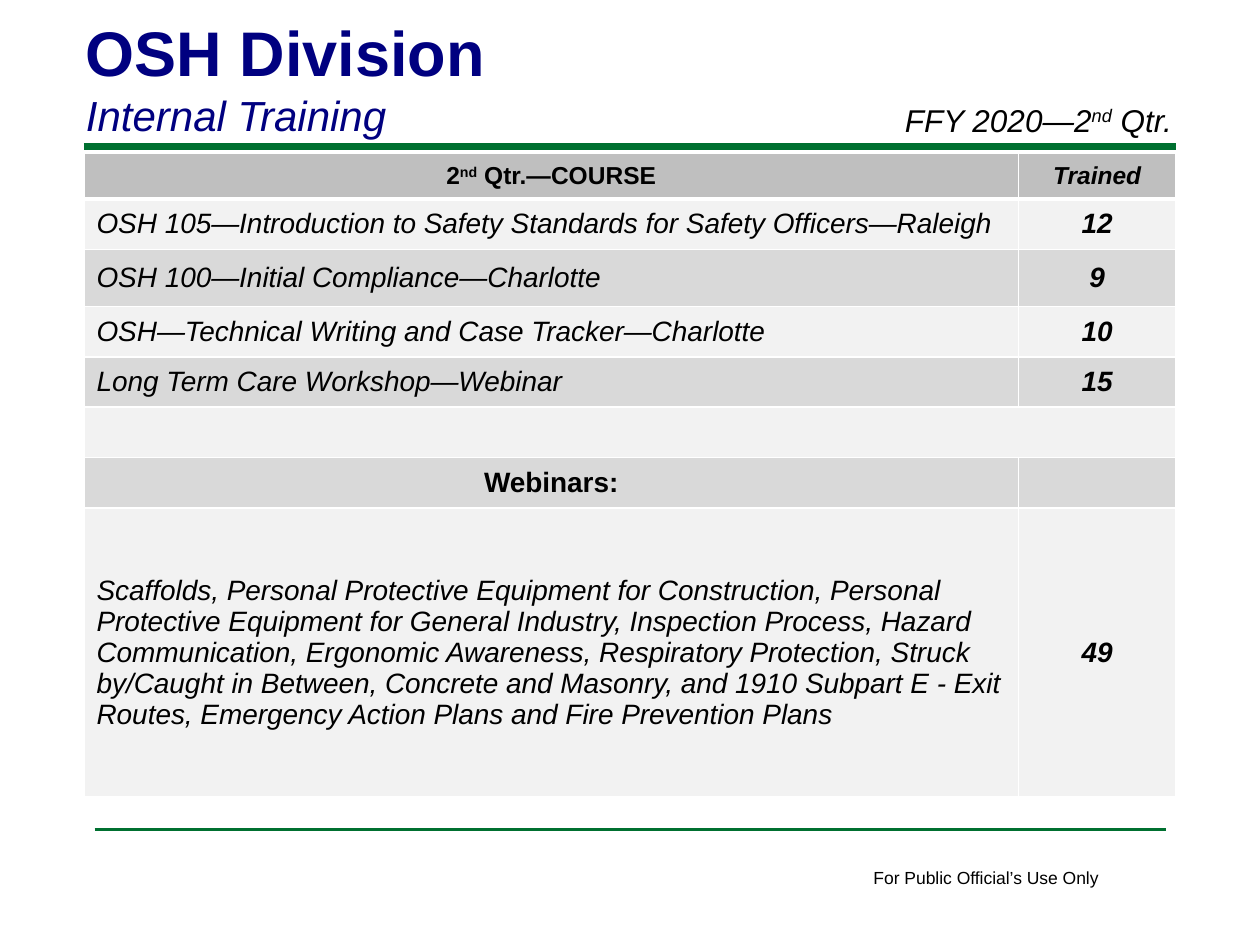
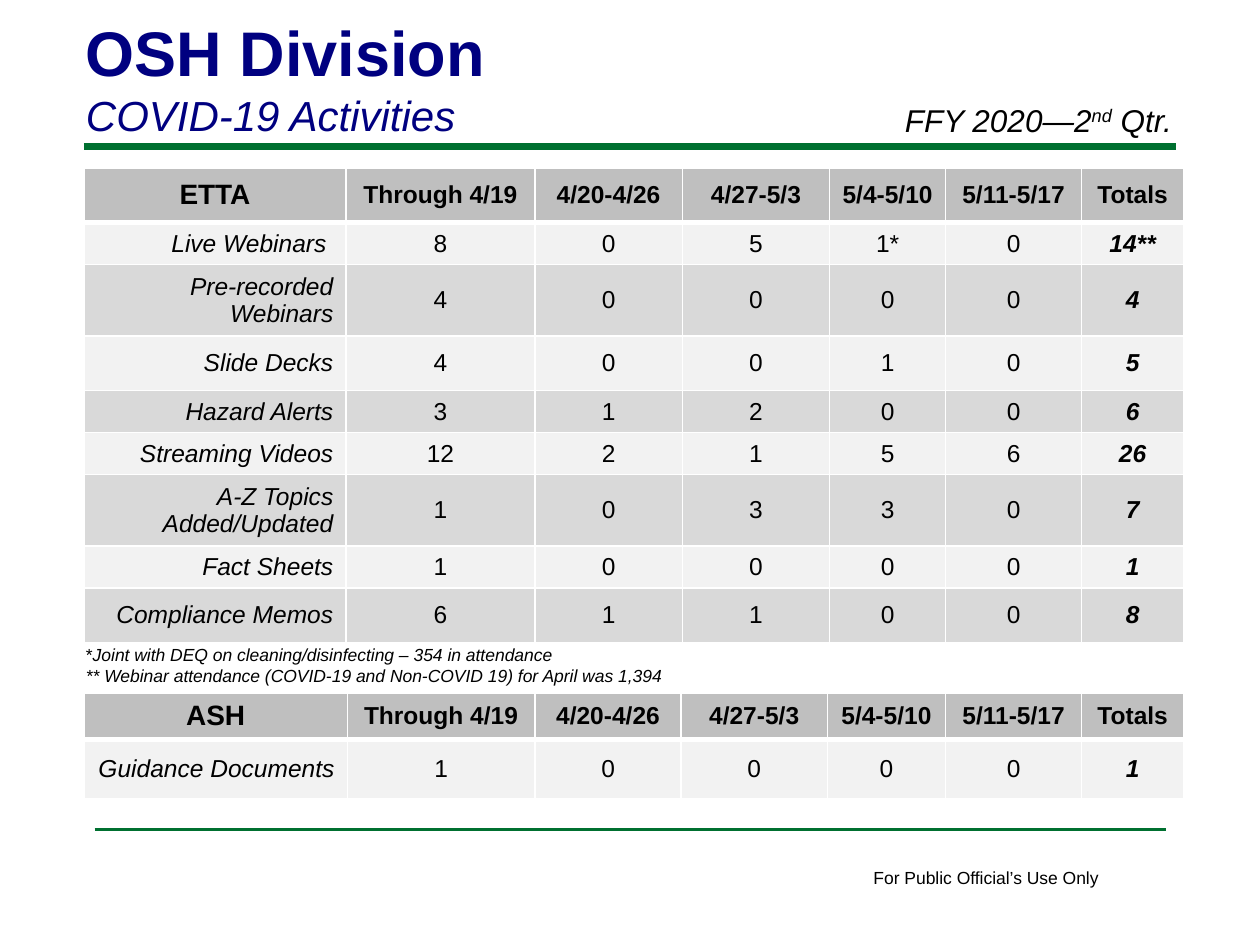
from dataclasses import dataclass

from lxml import etree
from pptx import Presentation
from pptx.dml.color import RGBColor
from pptx.enum.shapes import MSO_CONNECTOR
from pptx.enum.text import MSO_ANCHOR, PP_ALIGN
from pptx.oxml.ns import qn
from pptx.util import Inches, Pt

LEFT, CENTER, RIGHT = PP_ALIGN.LEFT, PP_ALIGN.CENTER, PP_ALIGN.RIGHT
MIDDLE = MSO_ANCHOR.MIDDLE
STRAIGHT = MSO_CONNECTOR.STRAIGHT


@dataclass(frozen=True)
class Theme:
    """Colours, font and type sizes shared by the slides."""
    font: str = "Arial"
    navy: str = "000080"
    green: str = "007030"
    black: str = "000000"
    white: str = "FFFFFF"
    head_fill: str = "BFBFBF"
    band_fills: tuple = ("F2F2F2", "D9D9D9")
    title: int = 36
    subtitle: int = 24
    period: int = 18
    large: int = 16
    body: int = 14
    small: int = 10


T = Theme()
WIDTH, HEIGHT = Inches(10), Inches(7.5)
COLS, ROWS = 120, 90


def across(n):
    """Return the length of n grid columns."""
    return round(WIDTH * n / COLS)


def down(n):
    """Return the length of n grid rows."""
    return round(HEIGHT * n / ROWS)


def write(p, text, size=T.body, color=T.black, bold=False, italic=False, align=LEFT):
    """Add text to a paragraph, with parts between carets as superscript."""
    p.alignment = align
    for i, part in enumerate(text.split("^")):
        if not part:
            continue
        r = p.add_run()
        r.text = part
        r.font.name, r.font.size = T.font, Pt(size)
        r.font.bold, r.font.italic = bold, italic
        r.font.color.rgb = RGBColor.from_string(color)
        if i % 2:
            r.font._element.set("baseline", "30000")


def add_text_frame(slide, box, wrap=True):
    """Add a text box on the grid and return its text frame."""
    x, y, w, h = box
    tf = slide.shapes.add_textbox(across(x), down(y), across(w), down(h)).text_frame
    tf.word_wrap = wrap
    return tf


def add_rule(slide, x, y, w, weight):
    """Draw a horizontal green rule."""
    line = slide.shapes.add_connector(STRAIGHT, across(x), down(y), across(x + w), down(y))
    line.line.color.rgb = RGBColor.from_string(T.green)
    line.line.width = Pt(weight)
    etree.SubElement(line._element.spPr, qn("a:effectLst"))


def add_header(slide, box, subtitle):
    """Place the title, subtitle, reporting period and rule."""
    x, y, w, h = box
    add_rule(slide, x, y + h, w, 4)
    tf = add_text_frame(slide, (x - 1, y, w - 5, h))
    write(tf.paragraphs[0], "OSH Division", size=T.title, color=T.navy, bold=True)
    write(tf.add_paragraph(), subtitle, size=T.subtitle, color=T.navy, italic=True)
    tf = add_text_frame(slide, (x + w - 27, y + h - 5, 30, 4.8))
    write(tf.paragraphs[0], "FFY 2020—2^nd^ Qtr.", size=T.period, italic=True)


def add_footer(slide, box):
    """Place the lower rule and the notice below it."""
    x, y, w, h = box
    add_rule(slide, x, y, w, 2)
    tf = add_text_frame(slide, (x + w - 29, y + 3, 24.1, h - 3), wrap=False)
    write(tf.paragraphs[0], "For Public Official’s Use Only", size=T.small)


def set_borders(cell, top, bottom):
    """Give a cell white borders with the given top and bottom weights."""
    tc_pr = cell._tc.get_or_add_tcPr()
    for side, weight in (("L", 1), ("R", 1), ("T", top), ("B", bottom)):
        ln = etree.SubElement(tc_pr, qn(f"a:ln{side}"), w=str(Pt(weight)))
        fill = etree.SubElement(ln, qn("a:solidFill"))
        etree.SubElement(fill, qn("a:srgbClr"), val=T.white)


def add_banded_table(slide, box, col_shares, row_shares, data, head, body):
    """Build a banded table; a None cell joins the one on its left."""
    x, y, w, h = box
    table = slide.shapes.add_table(
        len(row_shares), len(col_shares), across(x), down(y), across(w), down(h)).table
    table.first_row = table.horz_banding = False
    for col, share in zip(table.columns, col_shares):
        col.width = across(w * share / sum(col_shares))
    for row, share in zip(table.rows, row_shares):
        row.height = down(h * share / sum(row_shares))
    for i, values in enumerate(data):
        fill = T.band_fills[(i - 1) % 2] if i else T.head_fill
        for j, value in enumerate(values):
            cell = table.cell(i, j)
            set_borders(cell, 3 if i == 1 else 1, 1 if i else 3)
            cell.fill.solid()
            cell.fill.fore_color.rgb = RGBColor.from_string(fill)
            cell.vertical_anchor = MIDDLE
            if value is None:
                table.cell(i, j - 1).merge(cell)
                continue
            text, extra = value if isinstance(value, tuple) else (value, {})
            fmt = (body if i else head)[j] | extra
            write(cell.text_frame.paragraphs[0], text, **fmt)


def add_report_slide(prs, subtitle):
    """Add a slide with the shared header and footer."""
    slide = prs.slides.add_slide(prs.slide_layouts[6])
    add_header(slide, (8, 0.7, 104, 13.3), subtitle)
    add_footer(slide, (9, 79, 102, 6.2))
    return slide


def training_slide(prs):
    """Build the internal training slide."""
    slide = add_report_slide(prs, "Internal Training")
    head = dict(bold=True, align=CENTER)
    trained = dict(size=T.large, bold=True, italic=True, align=CENTER)
    data = [
        ("2^nd^ Qtr.—COURSE", "Trained"),
        ("OSH 105—Introduction to Safety Standards for Safety Officers—Raleigh", "12"),
        ("OSH 100—Initial Compliance—Charlotte", "9"),
        ("OSH—Technical Writing and Case Tracker—Charlotte", "10"),
        ("Long Term Care Workshop—Webinar", "15"),
        ("", None),
        (("Webinars:", dict(bold=True, italic=False, align=CENTER)), ""),
        ("Scaffolds, Personal Protective Equipment for Construction, Personal "
         "Protective Equipment for General Industry, Inspection Process, Hazard "
         "Communication, Ergonomic Awareness, Respiratory Protection, Struck "
         "by/Caught in Between, Concrete and Masonry, and 1910 Subpart E - Exit "
         "Routes, Emergency Action Plans and Fire Prevention Plans", "49"),
    ]
    add_banded_table(
        slide, (8, 14.64, 104, 61.3), (7.42, 1.25),
        (0.36, 0.4, 0.45, 0.4, 0.4, 0.4, 0.4, 2.29), data,
        [head, head | dict(italic=True)], [dict(size=T.large, italic=True), trained])


def activities_slide(prs):
    """Build the COVID-19 activities slide."""
    slide = add_report_slide(prs, "COVID-19 Activities")
    periods = ("Through 4/19", "4/20-4/26", "4/27-5/3", "5/4-5/10", "5/11-5/17", "Totals")
    head = dict(bold=True, align=CENTER)
    heads = [head | dict(size=T.large)] + [head] * 6
    body = [dict(italic=True, align=RIGHT)] + [dict(align=CENTER)] * 5
    body.append(head | dict(italic=True))
    etta = [
        ("ETTA", *periods),
        ("Live Webinars ", "8", "0", "5", "1*", "0", "14**"),
        ("Pre-recorded Webinars", *"400004"),
        ("Slide Decks", *"400105"),
        ("Hazard Alerts", *"312006"),
        ("Streaming Videos", "12", "2", "1", "5", "6", "26"),
        ("A-Z Topics Added/Updated", *"103307"),
        ("Fact Sheets", *"100001"),
        ("Compliance Memos", *"611008"),
    ]
    ash = [("ASH", *periods), ("Guidance Documents", *"100001")]
    add_banded_table(
        slide, (8, 16, 104.75, 45), (2.08, 1.5, 1.17, 1.17, 0.92, 1.08, 0.81),
        (0.43, 0.33, 0.56, 0.43, 0.33, 0.33, 0.56, 0.33, 0.43), etta, heads, body)
    tf = add_text_frame(slide, (7, 60.7, 86.3, 5.3))
    p = tf.paragraphs[0]
    write(p, "*", size=T.small)
    write(p, "Joint with DEQ on cleaning/disinfecting – 354 in attendance",
          size=T.small, italic=True)
    write(tf.add_paragraph(),
          "** Webinar attendance (COVID-19 and Non-COVID 19) for April was 1,394",
          size=T.small, italic=True)
    add_banded_table(
        slide, (8, 66, 104.75, 10), (2.09, 1.49, 1.16, 1.16, 0.94, 1.08, 0.81),
        (0.36, 0.47), ash, heads, body)


def main():
    """Build and save the presentation."""
    prs = Presentation()
    prs.slide_width, prs.slide_height = WIDTH, HEIGHT
    training_slide(prs)
    activities_slide(prs)
    prs.save("out.pptx")


if __name__ == "__main__":
    main()
